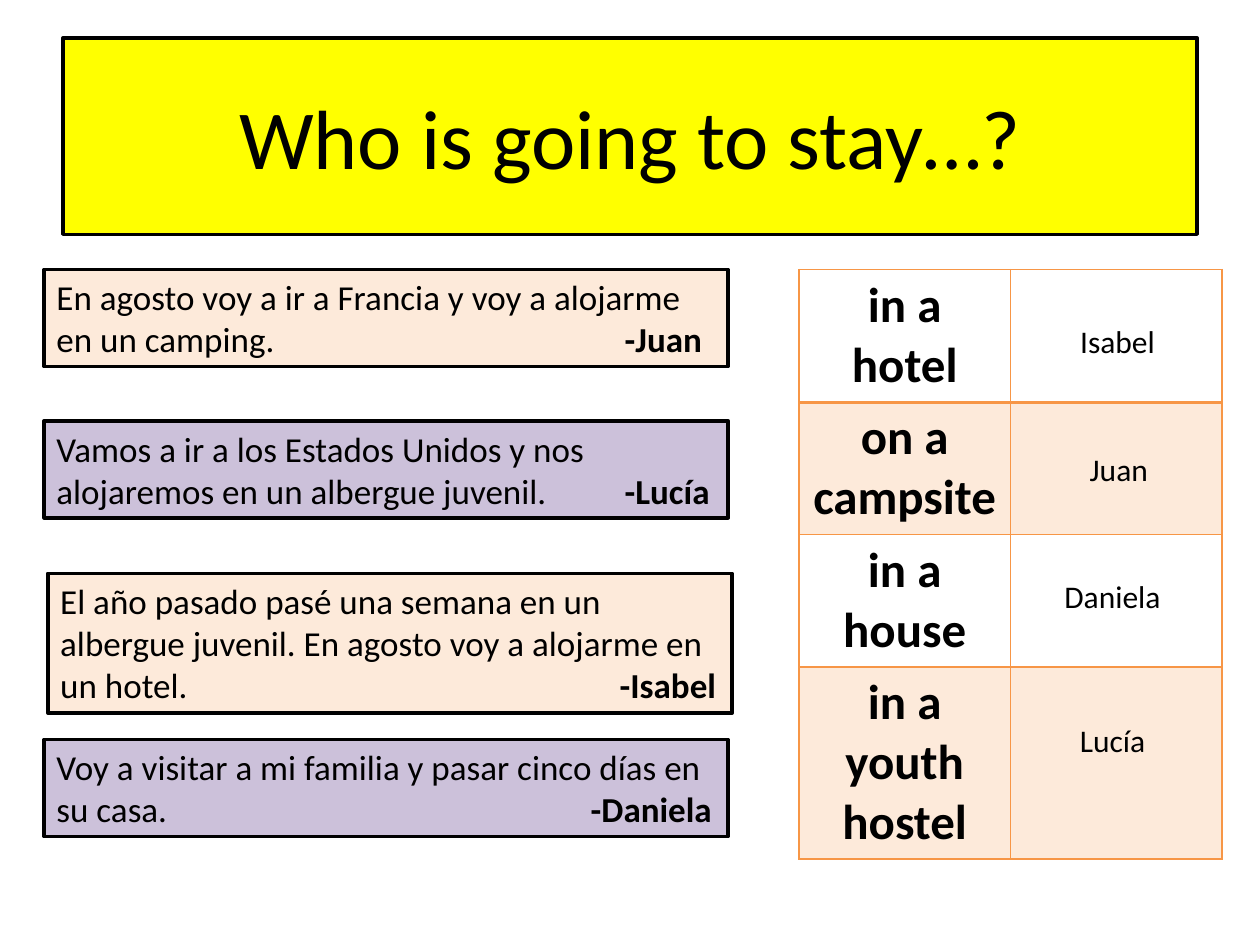
from lxml import etree
from pptx import Presentation
from pptx import util as u
from pptx.dml.color import RGBColor
from pptx.enum import shapes, text
from pptx.oxml.ns import qn

FONT = "Calibri"
BLACK, YELLOW, ORANGE = "000000", "FFFF00", "F79646"
PEACH, LILAC = "FDEADA", "CCC1DA"
LEFT, TOP, BOX_W = 0.35, 2.14, 5.43      # sentence column
TABLE_X, COL_W = 6.34, 1.68              # answer table

# sentence, speaker, left, top, height, fill, tab stop of the speaker
SENTENCES = [
    ("En agosto voy a ir a Francia y voy a alojarme en un camping.",
     "-Juan", LEFT, TOP, 0.77, PEACH, 4.51),
    ("Vamos a ir a los Estados Unidos y nos alojaremos en un albergue juvenil.",
     "-Lucía", LEFT, 3.34, 0.77, LILAC, 4.51),
    ("El año pasado pasé una semana en un albergue juvenil. "
     "En agosto voy a alojarme en un hotel.",
     "-Isabel", 0.38, 4.55, 1.11, PEACH, 4.44),
    ("Voy a visitar a mi familia y pasar cinco días en su casa.",
     "-Daniela", LEFT, 5.87, 0.77, LILAC, 4.24),
]
# place, row height
PLACES = [("in a hotel", 1.05), ("on a campsite", 1.05),
          ("in a house", 1.05), ("in a youth hostel", 1.52)]
# name, left, top
ANSWERS = [("Isabel", 8.2, 2.51), ("Juan", 8.21, 3.52),
           ("Daniela", 8.16, 4.53), ("Lucía", 8.16, 5.67)]


def color(value):
    return RGBColor.from_string(value)


def inches(*values):
    return [u.Inches(v) for v in values]


def add_text(p, content, size=20, bold=False, align=None):
    r = p.add_run()
    r.text = content
    r.font.name, r.font.size, r.font.bold = FONT, u.Pt(size), bold
    r.font.color.rgb = color(BLACK)
    if align is not None:
        p.alignment = align


def paint(sp, fill):
    sp.fill.solid()
    sp.fill.fore_color.rgb = color(fill)
    sp.line.color.rgb = color(BLACK)
    sp.line.width = u.Pt(2)


def set_tab(p, position):
    tabs = etree.SubElement(p._p.get_or_add_pPr(), qn("a:tabLst"))
    etree.SubElement(tabs, qn("a:tab"), pos=str(u.Inches(position)), algn="l")


def add_title(s, content):
    sp = s.shapes.title
    sp.left, sp.top, sp.width, sp.height = inches(0.5, 0.3, 9, 1.56)
    paint(sp, YELLOW)
    sp.text_frame.vertical_anchor = text.MSO_ANCHOR.MIDDLE
    add_text(sp.text_frame.paragraphs[0], content, size=48,
             align=text.PP_ALIGN.CENTER)


def add_sentence(s, sentence, speaker, left, top, height, fill, tab):
    sp = s.shapes.add_shape(shapes.MSO_SHAPE.RECTANGLE,
                            *inches(left, top, BOX_W, height))
    sp.shadow.inherit = False
    paint(sp, fill)
    tf = sp.text_frame
    tf.word_wrap = True
    tf.vertical_anchor = text.MSO_ANCHOR.TOP
    p = tf.paragraphs[0]
    set_tab(p, tab)
    add_text(p, sentence + "\t", align=text.PP_ALIGN.LEFT)
    add_text(p, speaker, bold=True)


def set_borders(cell, **widths):
    tc_pr = cell._tc.get_or_add_tcPr()
    for i, side in enumerate(("lnL", "lnR", "lnT", "lnB")):
        ln = etree.Element(qn("a:" + side), w=str(u.Pt(widths.get(side, 1))))
        fill = etree.SubElement(ln, qn("a:solidFill"))
        etree.SubElement(fill, qn("a:srgbClr"), val=ORANGE)
        tc_pr.insert(i, ln)


def fill_cell(cell, shaded):
    if not shaded:
        cell.fill.background()
        return
    cell.fill.solid()
    cell.fill.fore_color.rgb = color(ORANGE)
    rgb = cell._tc.tcPr.find(".//" + qn("a:srgbClr"))
    etree.SubElement(rgb, qn("a:alpha"), val="20000")


def add_places(s):
    height = sum(h for _, h in PLACES)
    table = s.shapes.add_table(len(PLACES), 2, *inches(
        TABLE_X, TOP, 2 * COL_W, height)).table
    table.first_row = table.horz_banding = False
    for row, (place, row_h) in enumerate(PLACES):
        table.rows[row].height = u.Inches(row_h)
        for cell in table.rows[row].cells:
            fill_cell(cell, shaded=row % 2 == 1)
            # heavier rule below the first row
            set_borders(cell, lnB=2 if row == 0 else 1,
                        lnT=2 if row == 1 else 1)
        add_text(table.cell(row, 0).text_frame.paragraphs[0], place,
                 size=28, bold=True, align=text.PP_ALIGN.CENTER)


def add_answer(s, name, left, top):
    tf = s.shapes.add_textbox(*inches(left, top, 1.34, 0.4)).text_frame
    tf.word_wrap = True
    add_text(tf.paragraphs[0], name, size=18, align=text.PP_ALIGN.CENTER)


def main():
    prs = Presentation()
    prs.slide_width, prs.slide_height = inches(10, 7.5)
    s = prs.slides.add_slide(prs.slide_layouts[5])
    add_title(s, "Who is going to stay…?")
    add_places(s)
    for sentence in SENTENCES:
        add_sentence(s, *sentence)
    for answer in ANSWERS:
        add_answer(s, *answer)
    prs.save("out.pptx")


if __name__ == "__main__":
    main()
